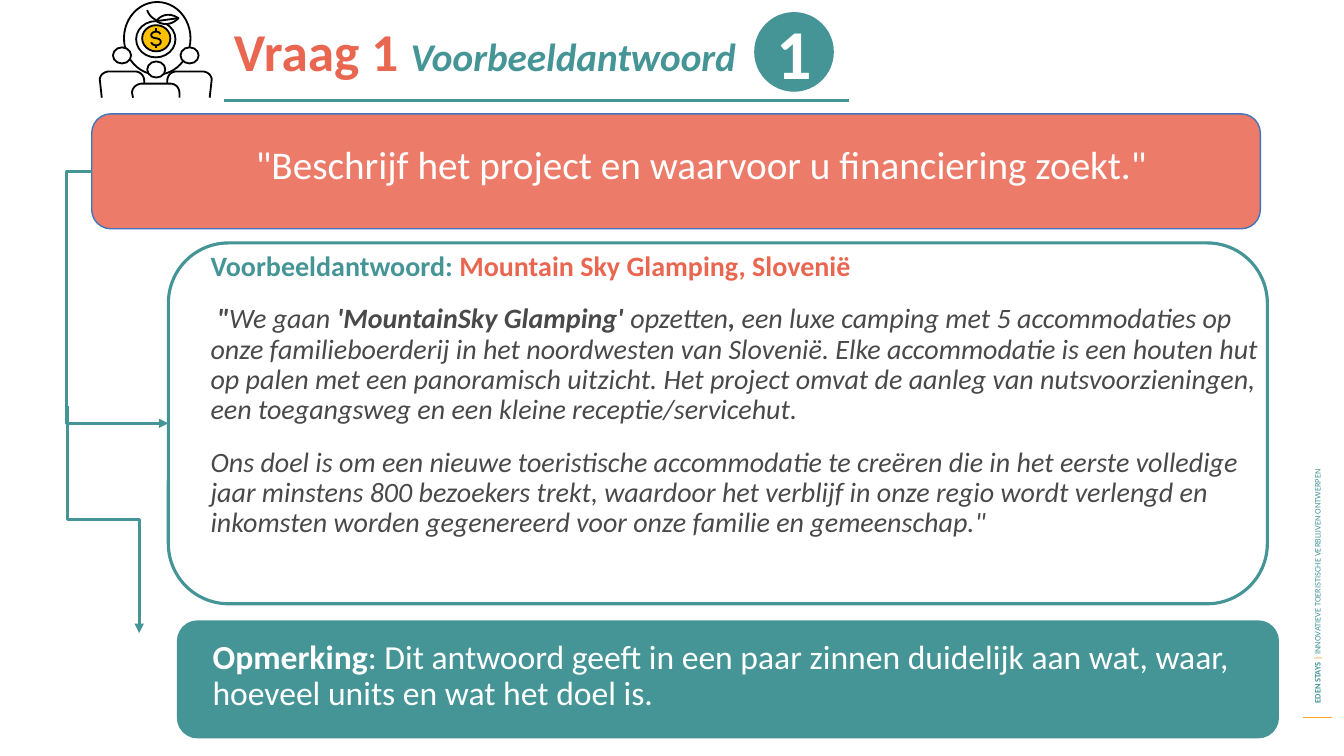
from dataclasses import dataclass
from typing import NamedTuple, Optional

from lxml import etree
from pptx import Presentation
from pptx.dml.color import RGBColor
from pptx.enum.shapes import MSO_CONNECTOR, MSO_SHAPE
from pptx.enum.text import MSO_ANCHOR, MSO_AUTO_SIZE, PP_ALIGN
from pptx.oxml.ns import qn
from pptx.util import Inches, Pt

STRAIGHT, ELBOW = MSO_CONNECTOR.STRAIGHT, MSO_CONNECTOR.ELBOW
PANEL, OVAL = MSO_SHAPE.FLOWCHART_ALTERNATE_PROCESS, MSO_SHAPE.OVAL
LEFT, CENTER = PP_ALIGN.LEFT, PP_ALIGN.CENTER
TOP, MIDDLE = MSO_ANCHOR.TOP, MSO_ANCHOR.MIDDLE
NO_AUTOFIT = MSO_AUTO_SIZE.NONE
LEFT_SIDE = 1
CURVE_STEPS = 10
ICON_AXIS = 1.545


@dataclass(frozen=True)
class Theme:
    font: str = "Calibri"
    teal: str = "459597"
    coral: str = "E96751"
    panel_coral: str = "EC7C69"
    panel_edge: str = "4174BA"
    amber: str = "FBA63B"
    coin: str = "FFC000"
    ink: str = "494949"
    white: str = "FFFFFF"
    black: str = "000000"
    badge_size: float = 50
    title_size: float = 38
    quote_size: float = 28
    note_size: float = 24
    answer_size: float = 20
    footer_size: float = 6
    rule: float = 2.25
    icon_line: float = 1.3


class Box(NamedTuple):
    left: float
    top: float
    width: float
    height: float


class Span(NamedTuple):
    text: str
    color: Optional[str] = None
    bold: Optional[bool] = None
    italic: Optional[bool] = None
    size: Optional[float] = None


class Para(NamedTuple):
    spans: list
    size: Optional[float] = None
    color: Optional[str] = None
    bold: Optional[bool] = None
    italic: Optional[bool] = None
    align: int = LEFT
    before: float = 0
    after: float = 0
    spacing: float = 0.9
    hanging: float = 0


class Curve(NamedTuple):
    start: tuple
    segments: list
    fill: Optional[str] = None
    closed: bool = False


THEME = Theme()


def inches(values) -> list:
    return [Inches(value) for value in values]


def style_font(font, style) -> None:
    if style.size:
        font.size = Pt(style.size)
    if style.color:
        font.color.rgb = RGBColor.from_string(style.color)
    if style.bold is not None:
        font.bold = style.bold
    if style.italic is not None:
        font.italic = style.italic


def write(frame, paras: list, anchor=TOP) -> None:
    frame.word_wrap = True
    frame.auto_size = NO_AUTOFIT
    frame.vertical_anchor = anchor
    for index, para in enumerate(paras):
        target = frame.add_paragraph() if index else frame.paragraphs[0]
        target.alignment = para.align
        target.line_spacing = para.spacing
        target.space_before, target.space_after = Pt(para.before), Pt(para.after)
        properties = target._p.get_or_add_pPr()
        properties.set("marL", str(Inches(para.hanging)))
        properties.set("indent", str(Inches(-para.hanging)))
        etree.SubElement(properties, qn("a:buNone"))
        target.font.name = THEME.font
        style_font(target.font, para)
        for span in para.spans:
            run = target.add_run()
            run.text = span.text
            style_font(run.font, span)


def add_text(shapes, box: Box, paras: list, anchor=TOP):
    holder = shapes.add_textbox(*inches(box))
    write(holder.text_frame, paras, anchor)
    return holder


def fill_placeholder(shapes, holder, box: Box, para: Para) -> None:
    holder.left, holder.top, holder.width, holder.height = inches(box)
    write(holder.text_frame, [para])
    shapes._spTree.append(holder._element)


def paint(shape, fill: Optional[str], line: Optional[str], width: float) -> None:
    shape.shadow.inherit = False
    if fill:
        shape.fill.solid()
        shape.fill.fore_color.rgb = RGBColor.from_string(fill)
    else:
        shape.fill.background()
    if line:
        shape.line.color.rgb = RGBColor.from_string(line)
        shape.line.width = Pt(width)
    else:
        shape.line.fill.background()


def add_shape(shapes, kind, box: Box, fill=None, line=None, width: float = THEME.rule):
    shape = shapes.add_shape(kind, *inches(box))
    paint(shape, fill, line, width)
    return shape


def add_line(shapes, ends: tuple, color: str, width: float, kind=STRAIGHT):
    line = shapes.add_connector(kind, *inches(ends))
    line.line.color.rgb = RGBColor.from_string(color)
    line.line.width = Pt(width)
    etree.SubElement(line._element.spPr, qn("a:effectLst"))
    return line


def add_bent_arrow(shapes, ends: tuple, bend: float):
    arrow = add_line(shapes, ends, THEME.teal, THEME.rule, ELBOW)
    etree.SubElement(arrow.line._get_or_add_ln(), qn("a:tailEnd"), type="triangle")
    adjustments = arrow._element.spPr.find(".//" + qn("a:avLst"))
    etree.SubElement(adjustments, qn("a:gd"), name="adj1", fmla=f"val {round(bend * 100000)}")
    return arrow


def bezier(points: list, t: float) -> tuple:
    while len(points) > 1:
        points = [(a + (c - a) * t, b + (d - b) * t) for (a, b), (c, d) in zip(points, points[1:])]
    return points[0]


def add_curve(shapes, curve: Curve, mirrored: bool = False) -> None:
    trail = [curve.start]
    for segment in curve.segments:
        steps = CURVE_STEPS if len(segment) > 1 else 1
        control = [trail[-1], *segment]
        trail += [bezier(control, step / steps) for step in range(1, steps + 1)]
    if mirrored:
        trail = [(2 * ICON_AXIS - x, y) for x, y in trail]
    points = [tuple(inches(point)) for point in trail]
    builder = shapes.build_freeform(*points[0])
    builder.add_line_segments(points[1:], close=curve.closed)
    paint(builder.convert_to_shape(), curve.fill, THEME.black, THEME.icon_line)


def draw_icon(shapes) -> None:
    shoulder = Curve((2.08, 0.97), [[(2.1, 0.79)], [(2.1, 0.75), (2.06, 0.71), (2.01, 0.71)],
                                    [(1.75, 0.71)], [(1.7, 0.71), (1.66, 0.75), (1.66, 0.8)], [(1.66, 0.83)]])
    front = Curve((1.78, 0.97), [[(1.78, 0.92)], [(1.78, 0.87), (1.74, 0.83), (1.69, 0.83)],
                                 [(1.41, 0.83)], [(1.36, 0.83), (1.31, 0.87), (1.31, 0.92)], [(1.32, 0.97)]])
    stem = Curve((1.46, 0.1), [[(1.47, 0.13), (1.49, 0.17), (1.55, 0.2)]])
    leaf = Curve((1.55, 0.21), [[(1.55, 0.21), (1.63, 0.09), (1.77, 0.18)],
                                [(1.77, 0.18), (1.68, 0.29), (1.55, 0.21)]], THEME.white, True)
    dollar = Curve((1.59, 0.34), [[(1.58, 0.3), (1.5, 0.31), (1.5, 0.35)], [(1.5, 0.37), (1.53, 0.38), (1.55, 0.38)],
                                  [(1.62, 0.39), (1.6, 0.45), (1.55, 0.45)], [(1.51, 0.45), (1.5, 0.42), (1.5, 0.42)]])
    discs = [(Box(1.23, 0.02, 0.66, 0.72), THEME.white), (Box(1.35, 0.21, 0.39, 0.36), None),
             (Box(1.41, 0.25, 0.28, 0.26), THEME.coin)]
    discs += [(Box(left, top, 0.18, 0.16), THEME.white) for left, top in ((1.12, 0.47), (1.79, 0.47), (1.46, 0.61))]
    for box, fill in discs:
        add_shape(shapes, OVAL, box, fill, THEME.black, THEME.icon_line)
    for mirrored in (False, True):
        add_curve(shapes, shoulder, mirrored)
    for curve in (front, stem, leaf, dollar):
        add_curve(shapes, curve)
    for ends in ((1.77, 0.18, 1.55, 0.21), (1.55, 0.28, 1.55, 0.32), (1.55, 0.45, 1.55, 0.48)):
        add_line(shapes, ends, THEME.black, THEME.icon_line)


def main() -> None:
    deck = Presentation()
    deck.slide_width, deck.slide_height = Inches(13.33), Inches(7.5)
    slide = deck.slides.add_slide(deck.slide_layouts[1])
    shapes = slide.shapes
    heading, quote = shapes.title, slide.placeholders[1]

    add_line(shapes, (12.92, 7.12, 13.21, 7.12), THEME.amber, 0.75)
    footer = add_text(shapes, Box(10.18, 4.09, 5.77, 0.2), [Para([
        Span("EDEN STAYS ", THEME.teal, True), Span("| ", THEME.amber, True),
        Span("INNOVATIEVE TOERISTISCHE VERBLIJVEN ONTWERPEN", THEME.teal, False),
    ], THEME.footer_size, spacing=1.0)], MIDDLE)
    footer.rotation = 270

    add_shape(shapes, PANEL, Box(1.77, 6.17, 10.9, 1.14), THEME.teal, THEME.teal)
    question = add_shape(shapes, PANEL, Box(0.91, 1.13, 11.59, 1.14), THEME.panel_coral, THEME.panel_edge, 1)
    answer = add_shape(shapes, PANEL, Box(1.67, 2.41, 10.9, 3.58), None, THEME.teal)

    fill_placeholder(shapes, heading, Box(2.22, 0.2, 11.61, 0.88), Para([
        Span("Vraag 1 ", THEME.coral, size=THEME.title_size),
        Span("Voorbeeldantwoord", THEME.teal, italic=True, size=THEME.quote_size)], bold=True))
    add_line(shapes, (2.22, 1, 8.42, 1), THEME.teal, THEME.rule)
    fill_placeholder(shapes, quote, Box(1.15, 1.39, 11.61, 0.88), Para(
        [Span("\"Beschrijf het project en waarvoor u financiering zoekt.\"")],
        THEME.quote_size, THEME.white, align=CENTER, after=6, hanging=0.25))

    add_text(shapes, Box(1.99, 2.45, 10.63, 0.88), [
        Para([Span("Voorbeeldantwoord: ", THEME.teal), Span("Mountain Sky Glamping, Slovenië", THEME.coral)],
             THEME.answer_size, bold=True, after=6),
        Para([Span(" \"", bold=True), Span("We gaan "), Span("'MountainSky Glamping' ", bold=True),
              Span("opzetten"), Span(", ", bold=True),
              Span("een luxe camping met 5 accommodaties op onze familieboerderij in het noordwesten van Slovenië. "
                   "Elke accommodatie is een houten hut op palen met een panoramisch uitzicht. Het project omvat de "
                   "aanleg van nutsvoorzieningen, een toegangsweg en een kleine receptie/servicehut.")],
             THEME.answer_size, THEME.ink, italic=True, before=10, after=6),
        Para([Span("Ons doel is om een nieuwe toeristische accommodatie te creëren die in het eerste volledige jaar "
                   "minstens 800 bezoekers trekt, waardoor het verblijf in onze regio wordt verlengd en inkomsten "
                   "worden gegenereerd voor onze familie en gemeenschap.\"")],
             THEME.answer_size, THEME.ink, italic=True, before=10, after=6)])
    add_text(shapes, Box(2.01, 6.3, 10.63, 0.88), [Para([
        Span("Opmerking", bold=True),
        Span(": Dit antwoord geeft in een paar zinnen duidelijk aan wat, waar, hoeveel units en wat het doel is."),
    ], THEME.note_size, THEME.white)])

    to_answer = add_bent_arrow(shapes, (0.91, 1.7, 1.67, 4.2), -0.33)
    to_answer.begin_connect(question, LEFT_SIDE)
    to_answer.end_connect(answer, LEFT_SIDE)
    to_note = add_bent_arrow(shapes, (2.15, 4.8, -0.1, 5.51), 0.5)
    to_note._element.spPr.find(qn("a:xfrm")).set("rot", str(270 * 60000))

    draw_icon(shapes.add_group_shape().shapes)
    badge = add_shape(shapes, OVAL, Box(7.48, 0.12, 0.79, 0.79), THEME.teal)
    write(badge.text_frame, [Para([Span("1")], THEME.badge_size, THEME.white, True, align=CENTER, spacing=1.0)], MIDDLE)
    deck.save("out.pptx")


if __name__ == "__main__":
    main()
